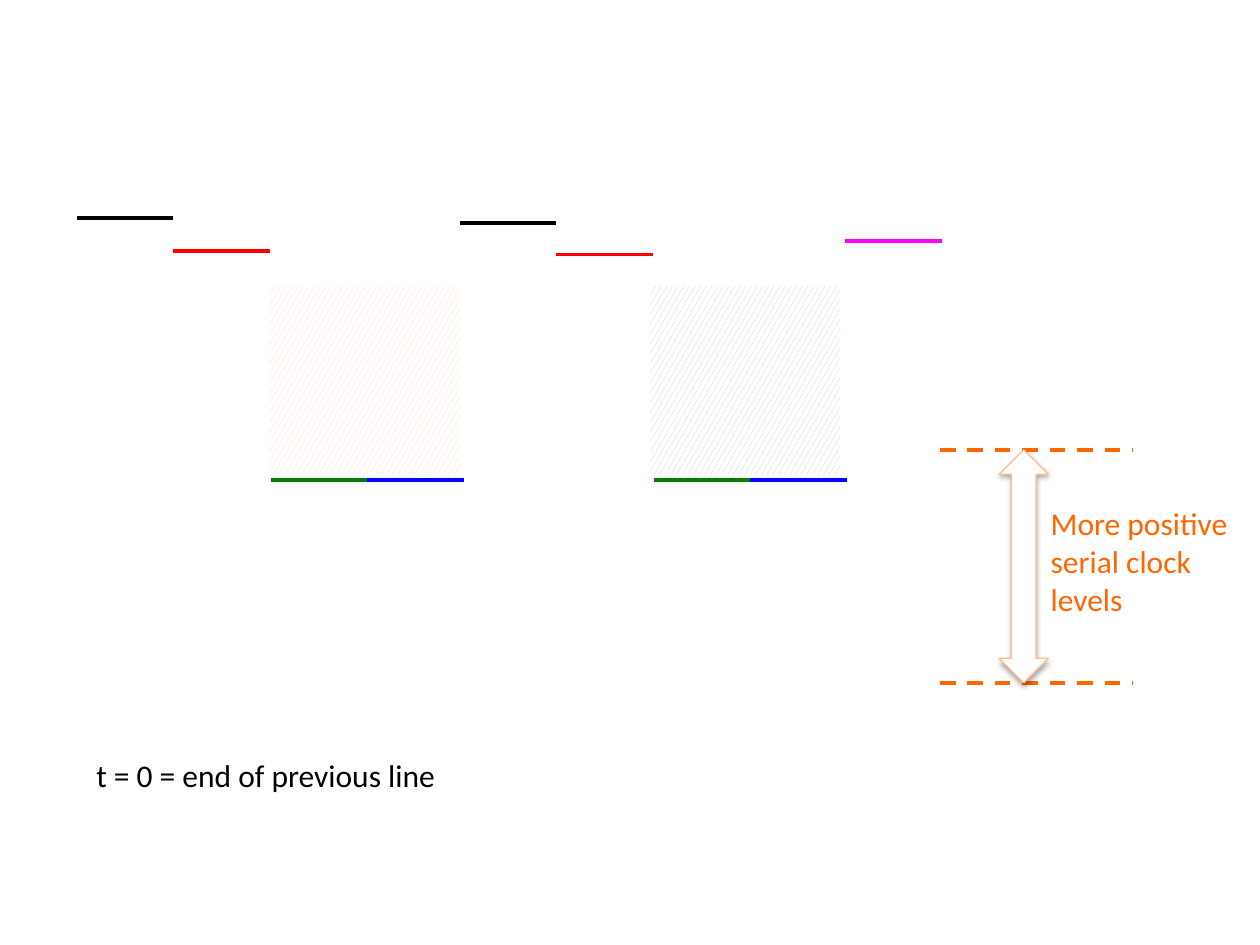
from lxml.etree import SubElement
from pptx import Presentation
from pptx.dml.color import RGBColor
from pptx.enum.dml import MSO_LINE, MSO_PATTERN
from pptx.enum.shapes import MSO_CONNECTOR, MSO_SHAPE
from pptx.enum.text import MSO_AUTO_SIZE
from pptx.oxml import parse_xml
from pptx.oxml.ns import nsdecls, qn
from pptx.util import Inches, Pt

STEP = 0.765
ORANGE = "FF6600"
SHADOW = (
    f'<a:effectLst {nsdecls("a")}>'
    '<a:outerShdw blurRad="39370" dist="22860" dir="5400000" rotWithShape="0">'
    '<a:srgbClr val="000000"><a:alpha val="35000"/></a:srgbClr>'
    '</a:outerShdw></a:effectLst>'
)


def color(code):
    return RGBColor.from_string(code)


class Painter:
    """Draws the parts of a clock diagram on one slide in a shared style."""

    font = "Calibri"
    size = Pt(18)
    weight = Pt(2.25)

    def __init__(self, slide):
        self.shapes = slide.shapes

    def level(self, left, top, width, ink, dash=None):
        line = self.shapes.add_connector(
            MSO_CONNECTOR.STRAIGHT,
            Inches(left), Inches(top), Inches(left + width), Inches(top))
        line.line.color.rgb = color(ink)
        line.line.width = self.weight
        if dash:
            line.line.dash_style = dash
        SubElement(line._element.spPr, qn("a:effectLst"))

    def block(self, kind, left, top, width, height):
        shape = self.shapes.add_shape(
            kind, Inches(left), Inches(top), Inches(width), Inches(height))
        shape.shadow.inherit = False
        return shape

    def hatch(self, left, top, width, height, ink):
        shape = self.block(MSO_SHAPE.RECTANGLE, left, top, width, height)
        shape.fill.patterned()
        shape.fill.pattern = MSO_PATTERN.LARGE_CONFETTI
        shape.fill.fore_color.rgb = color(ink)
        shape.fill.back_color.rgb = color("FFFFFF")
        shape.line.fill.background()

    def arrow(self, left, top, width, height):
        shape = self.block(MSO_SHAPE.UP_DOWN_ARROW, left, top, width, height)
        shape.fill.solid()
        shape.fill.fore_color.rgb = color("FFFFFF")
        shape.line.color.rgb = color("FAC090")
        shape.line.width = Pt(0.75)
        props = shape._element.spPr
        props.replace(props.find(qn("a:effectLst")), parse_xml(SHADOW))

    def text(self, left, top, width, height, words, ink):
        box = self.shapes.add_textbox(
            Inches(left), Inches(top), Inches(width), Inches(height))
        frame = box.text_frame
        frame.word_wrap = True
        frame.auto_size = MSO_AUTO_SIZE.SHAPE_TO_FIT_TEXT
        frame.text = words
        for para in frame.paragraphs:
            para.font.name = self.font
            para.font.size = self.size
            para.font.color.rgb = color(ink)


def main():
    deck = Presentation()
    deck.slide_width, deck.slide_height = Inches(10), Inches(7.5)
    pen = Painter(deck.slides.add_slide(deck.slide_layouts[6]))

    cycles = [
        (0.61, 1.73, 1.99, 2.14, "FCD5B5"),
        (3.65, 1.77, 2.02, 5.16, "CCC1DA"),
    ]
    for left, high, mid, edge, tint in cycles:
        pen.level(left, high, STEP, "000000")
        pen.level(left + STEP, mid, STEP, "FF0000")
        pen.hatch(edge, 2.27, 1.51, 1.5, tint)
        low = left + 2 * STEP + 0.01
        pen.level(low, 3.81, STEP, "008000")
        pen.level(low + STEP, 3.81, STEP, "0000FF")
    pen.level(6.71, 1.91, STEP, "FF00FF")

    top, base = 3.57, 5.42
    for height in (top, base):
        pen.level(7.46, height, 2 * STEP, ORANGE, MSO_LINE.DASH)
    pen.arrow(7.93, top, 0.39, base - top)

    pen.text(0.61, 5.95, 5, 0.4, " t = 0 = end of previous line", "000000")
    pen.text(8.24, 3.95, 1.68, 1.01,
             "More positive\nserial clock levels", ORANGE)
    deck.save("out.pptx")


if __name__ == "__main__":
    main()
